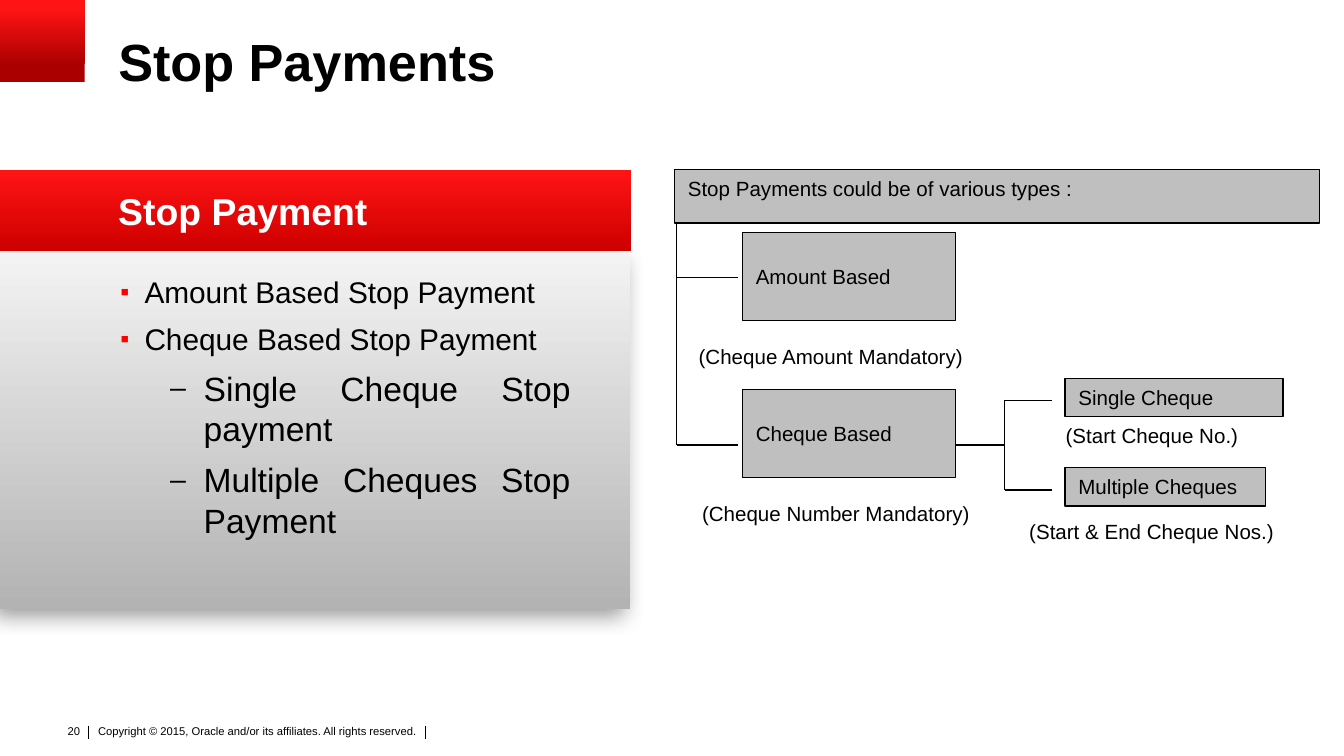
"""Build the Stop Payments slide, measured on a grid 100 columns wide with square cells."""
from dataclasses import dataclass

from lxml import etree
from pptx import Presentation
from pptx.dml.color import RGBColor
from pptx.enum.shapes import MSO_CONNECTOR, MSO_SHAPE
from pptx.enum.text import MSO_ANCHOR, PP_ALIGN
from pptx.oxml.ns import qn
from pptx.util import Emu, Inches, Pt

RECTANGLE = MSO_SHAPE.RECTANGLE
STRAIGHT = MSO_CONNECTOR.STRAIGHT
TOP, MIDDLE = MSO_ANCHOR.TOP, MSO_ANCHOR.MIDDLE
LEFT, RIGHT, JUSTIFY = PP_ALIGN.LEFT, PP_ALIGN.RIGHT, PP_ALIGN.JUSTIFY
COLORS = {
    "black": "000000", "white": "FFFFFF", "node": "BFBFBF", "bullet": "FF0000",
    "panel dark": "B3B3B3", "panel light": "F3F3F3",
    "red": "FF1414", "header red": "CE0000", "deep red": "AA0000",
}
FONT = "Arial"
WIDTH = Inches(10)
HEIGHT = Emu(WIDTH * 9 // 16)
CELL = WIDTH / 100
UPWARD, DOWNWARD = 90, 270


@dataclass(frozen=True)
class Area:
    column: float
    row: float
    columns: float
    rows: float

    def lengths(self) -> list[Emu]:
        return [grid(n) for n in (self.column, self.row, self.columns, self.rows)]


@dataclass(frozen=True)
class Band:
    area: Area
    stops: tuple[tuple[float, str], tuple[float, str]]
    angle: int
    shadow: bool = False


@dataclass(frozen=True)
class Label:
    text: str
    area: Area
    size: float = 11
    color: str = "black"
    bold: bool = False
    align: PP_ALIGN = LEFT
    anchor: MSO_ANCHOR = TOP
    inset: tuple[float, float] = (1, 0.5)
    spacing: float = 1.0


@dataclass(frozen=True)
class Bullet:
    text: str
    level: int = 0


@dataclass(frozen=True)
class BulletStyle:
    mark: str
    size: float
    margin: float
    indent: float
    color: str


@dataclass(frozen=True)
class Line:
    column: float
    row: float
    end_column: float
    end_row: float
    weight: float = 0.75


BANDS = [
    Band(Area(0, 18.8, 46.9, 26.5), ((0, "panel dark"), (1, "panel light")), UPWARD, True),
    Band(Area(0, 12.65, 46.95, 6), ((0, "red"), (1, "header red")), DOWNWARD),
    Band(Area(0, 0, 6.3, 6.1), ((0.2, "deep red"), (0.9, "red")), UPWARD),
]
FLUSH = (0, 0)
LABELS = [
    Label("Copyright © 2015, Oracle and/or its affiliates. All rights reserved.",
          Area(6.9, 53.7, 27.4, 2.4), size=6, inset=(0.4, 0.2)),
    Label("20", Area(3.95, 53.4, 3, 2), size=6, align=RIGHT),
    Label("Stop Payment", Area(8.8, 12.7, 37.3, 6), size=20, color="white", bold=True,
          anchor=MIDDLE, inset=FLUSH),
    Label("Stop Payments", Area(8.8, 2.7, 89.9, 8.4), size=28, bold=True, inset=FLUSH,
          spacing=0.9),
    Label("(Cheque Amount Mandatory)", Area(51, 25.1, 26.4, 2.9)),
    Label("(Cheque Number Mandatory)", Area(51.25, 36.8, 26.4, 2.9)),
    Label("(Start Cheque No.)", Area(78.3, 31, 18.1, 2.9)),
    Label("(Start & End Cheque Nos.)", Area(75.6, 38.15, 24.4, 2.9)),
]
NODES = [
    Label("Stop Payments could be of various types :", Area(50.2, 12.6, 48, 4)),
    Label("Amount Based", Area(55.25, 17.3, 15.85, 6.55), anchor=MIDDLE),
    Label("Cheque Based", Area(55.25, 29, 15.85, 6.55), anchor=MIDDLE),
    Label("Single Cheque", Area(79.25, 28.15, 16.2, 2.85)),
    Label("Multiple Cheques", Area(79.25, 34.8, 14.9, 2.85)),
]
BULLET_AREA = Area(8.25, 20.35, 34.2, 23.4)
BULLET_STYLES = [
    BulletStyle("▪", 16, 2.5, -1.8, "bullet"),
    BulletStyle("–", 18, 6.9, -2.5, "black"),
]
BULLETS = [
    Bullet("Amount Based Stop Payment"),
    Bullet("Cheque Based Stop Payment"),
    Bullet("Single Cheque Stop payment", 1),
    Bullet("Multiple Cheques Stop Payment", 1),
]
TRUNK, FORK = 50.35, 74.75
LINES = [
    *(Line(column, 54, column, 55, 0.5) for column in (6.55, 31.65)),
    Line(TRUNK, 16.5, TRUNK, 33.1),
    *(Line(TRUNK, row, 54.9, row) for row in (20.65, 33.1)),
    Line(71.1, 33.1, FORK, 33.1),
    *(Line(FORK, row, 78.3, row) for row in (29.8, 36.45)),
    Line(FORK, 29.8, FORK, 36.45),
]


def grid(cells: float) -> Emu:
    return Emu(round(cells * CELL))


def rgb(name: str) -> RGBColor:
    return RGBColor.from_string(COLORS[name])


def add_span(para, text: str, size: float, color: str = "black", bold: bool = False) -> None:
    span = para.add_run()
    span.text = text
    span.font.name, span.font.size, span.font.bold = FONT, Pt(size), bold
    span.font.color.rgb = rgb(color)


def write(box, label: Label) -> None:
    frame = box.text_frame
    frame.word_wrap = True
    frame.vertical_anchor = label.anchor
    frame.margin_left = frame.margin_right = grid(label.inset[0])
    frame.margin_top = frame.margin_bottom = grid(label.inset[1])
    para = frame.paragraphs[0]
    para.alignment, para.line_spacing = label.align, label.spacing
    add_span(para, label.text, label.size, label.color, label.bold)


def add_rectangle(page, area: Area):
    box = page.shapes.add_shape(RECTANGLE, *area.lengths())
    box.shadow.inherit = False
    return box


def add_band(page, band: Band) -> None:
    box = add_rectangle(page, band.area)
    box.line.fill.background()
    box.fill.gradient()
    box.fill.gradient_angle = band.angle
    for stop, (position, color) in zip(box.fill.gradient_stops, band.stops):
        stop.position, stop.color.rgb = position, rgb(color)
    if band.shadow:
        effects = box._element.spPr.find(qn("a:effectLst"))
        shadow = etree.SubElement(effects, qn("a:outerShdw"), blurRad=str(Pt(12)),
                                  dist=str(Pt(5)), dir=str(130 * 60000), rotWithShape="0")
        color = etree.SubElement(shadow, qn("a:srgbClr"), val=COLORS["black"])
        etree.SubElement(color, qn("a:alpha"), val="40000")


def add_node(page, label: Label) -> None:
    box = add_rectangle(page, label.area)
    box.fill.solid()
    box.fill.fore_color.rgb = rgb("node")
    box.line.color.rgb, box.line.width = rgb("black"), Pt(0.75)
    write(box, label)


def add_bullets(page, area: Area, bullets: list[Bullet]) -> None:
    frame = page.shapes.add_textbox(*area.lengths()).text_frame
    frame.word_wrap = True
    frame.margin_left = frame.margin_right = frame.margin_top = frame.margin_bottom = 0
    for index, bullet in enumerate(bullets):
        style = BULLET_STYLES[bullet.level]
        para = frame.add_paragraph() if index else frame.paragraphs[0]
        properties = para._p.get_or_add_pPr()
        properties.set("marL", str(grid(style.margin)))
        properties.set("indent", str(grid(style.indent)))
        color = etree.SubElement(properties, qn("a:buClr"))
        etree.SubElement(color, qn("a:srgbClr"), val=COLORS[style.color])
        etree.SubElement(properties, qn("a:buSzPct"), val="85000")
        etree.SubElement(properties, qn("a:buFont"), typeface=FONT)
        etree.SubElement(properties, qn("a:buChar"), char=style.mark)
        para.level, para.alignment, para.space_after = bullet.level, JUSTIFY, Pt(6)
        add_span(para, bullet.text, style.size)


def add_line(page, line: Line) -> None:
    ends = (line.column, line.row, line.end_column, line.end_row)
    connector = page.shapes.add_connector(STRAIGHT, *map(grid, ends))
    connector.line.color.rgb, connector.line.width = rgb("black"), Pt(line.weight)
    etree.SubElement(connector._element.spPr, qn("a:effectLst"))


def main() -> None:
    deck = Presentation()
    deck.slide_width, deck.slide_height = WIDTH, HEIGHT
    page = deck.slides.add_slide(deck.slide_layouts[6])
    for band in BANDS:
        add_band(page, band)
    add_bullets(page, BULLET_AREA, BULLETS)
    for node in NODES:
        add_node(page, node)
    for label in LABELS:
        write(page.shapes.add_textbox(*label.area.lengths()), label)
    for line in LINES:
        add_line(page, line)
    deck.save("out.pptx")


if __name__ == "__main__":
    main()
